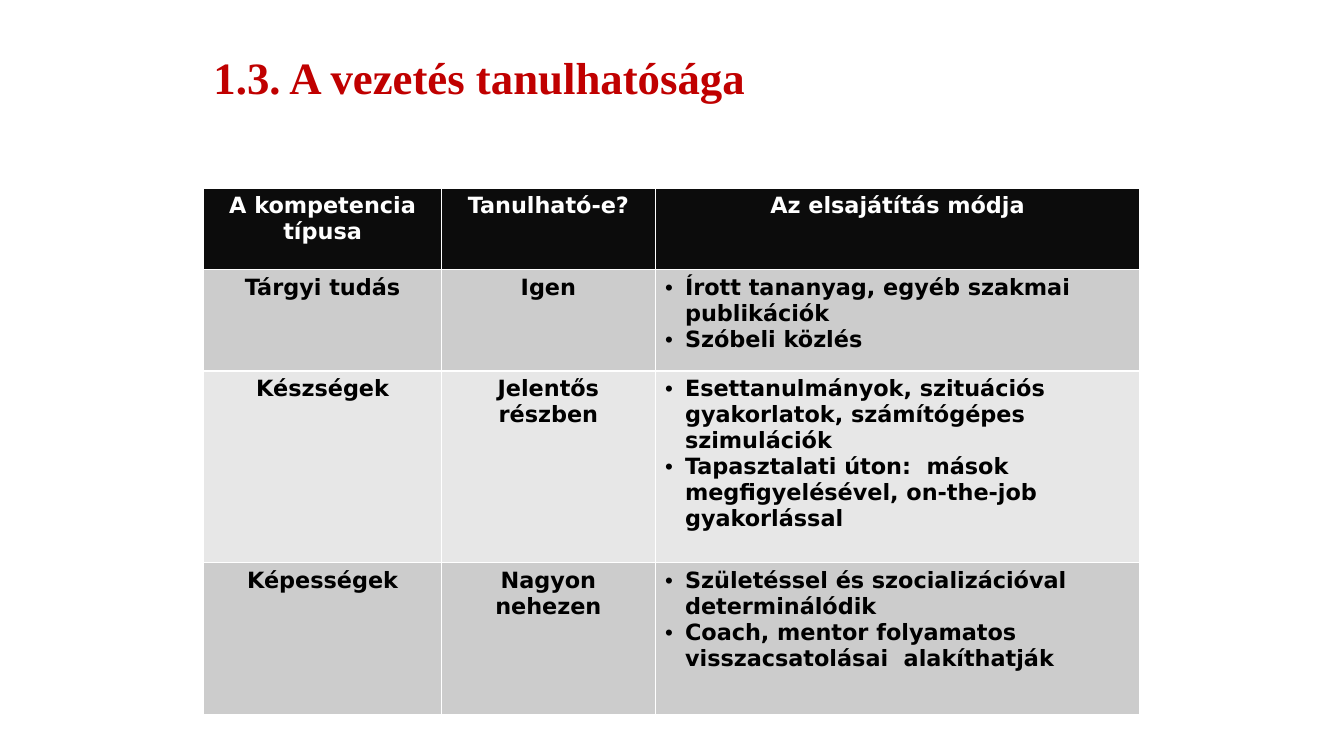
from lxml.etree import SubElement
from pptx import Presentation
from pptx.dml.color import RGBColor
from pptx.enum.text import MSO_ANCHOR, PP_ALIGN
from pptx.oxml.ns import qn
from pptx.util import Cm, Pt

RED, BLACK, WHITE = "C00000", "000000", "FFFFFF"
HEADER_FILL, DARK_BAND, LIGHT_BAND = "0C0C0C", "CCCCCC", "E7E7E7"
LEFT = 5.13
COLUMN_WIDTHS = [6, 5.38, 12.22]
ROW_HEIGHTS = [2.06, 2.55, 4.83, 3.84]
HEADER = ["A kompetencia típusa", "Tanulható-e?", "Az elsajátítás módja"]
COMPETENCES = [
    ("Tárgyi tudás", "Igen",
     ["Írott tananyag, egyéb szakmai publikációk", "Szóbeli közlés"]),
    ("Készségek", "Jelentős részben",
     ["Esettanulmányok, szituációs gyakorlatok, számítógépes szimulációk",
      "Tapasztalati úton:  mások megfigyelésével, on-the-job gyakorlással"]),
    ("Képességek", "Nagyon nehezen",
     ["Születéssel és szocializációval determinálódik",
      "Coach, mentor folyamatos  visszacsatolásai  alakíthatják"]),
]


def rgb(color):
    return RGBColor.from_string(color)


def add_bullet(p, indent=0.5):
    pPr = p._p.get_or_add_pPr()
    pPr.set("marL", str(Cm(indent)))
    pPr.set("indent", str(-Cm(indent)))
    SubElement(pPr, qn("a:buFont"), typeface="Arial")
    SubElement(pPr, qn("a:buChar"), char="•")


def write(tf, text, font="DejaVu Sans", size=16, color=BLACK,
          align=PP_ALIGN.LEFT):
    """Fill a text frame; a list of texts becomes a bulleted list."""
    bulleted = isinstance(text, list)
    for i, line in enumerate(text if bulleted else [text]):
        p = tf.add_paragraph() if i else tf.paragraphs[0]
        p.alignment = align
        if bulleted:
            add_bullet(p)
        r = p.add_run()
        r.text = line
        r.font.name, r.font.size, r.font.bold = font, Pt(size), True
        r.font.color.rgb = rgb(color)


def set_borders(cell, color=WHITE, width=1):
    tcPr = cell._tc.get_or_add_tcPr()
    for side in ("lnL", "lnR", "lnT", "lnB"):
        ln = SubElement(tcPr, qn(f"a:{side}"), w=str(Pt(width)))
        fill = SubElement(ln, qn("a:solidFill"))
        SubElement(fill, qn("a:srgbClr"), val=color)


def add_title(s, left, top, width, height):
    tf = s.shapes.add_textbox(Cm(left), Cm(top), Cm(width), Cm(height)).text_frame
    tf.word_wrap = True
    tf.vertical_anchor = MSO_ANCHOR.MIDDLE
    write(tf, "1.3. A vezetés tanulhatósága", font="Times New Roman", size=32,
          color=RED)


def add_competence_table(s, left, top):
    rows = [HEADER, *COMPETENCES]
    table = s.shapes.add_table(
        len(rows), len(HEADER), Cm(left), Cm(top),
        Cm(sum(COLUMN_WIDTHS)), Cm(sum(ROW_HEIGHTS))).table
    for column, width in zip(table.columns, COLUMN_WIDTHS):
        column.width = Cm(width)
    for i, (texts, height) in enumerate(zip(rows, ROW_HEIGHTS)):
        table.rows[i].height = Cm(height)
        band = DARK_BAND if i % 2 else LIGHT_BAND
        for j, text in enumerate(texts):
            cell = table.cell(i, j)
            set_borders(cell)
            cell.fill.solid()
            cell.fill.fore_color.rgb = rgb(band if i else HEADER_FILL)
            write(cell.text_frame, text, color=BLACK if i else WHITE,
                  align=PP_ALIGN.LEFT if isinstance(text, list) else PP_ALIGN.CENTER)


def main():
    prs = Presentation()
    prs.slide_width, prs.slide_height = Cm(33.87), Cm(19.05)
    s = prs.slides.add_slide(prs.slide_layouts[6])
    add_title(s, LEFT, 0.76, 24.5, 2.36)
    add_competence_table(s, LEFT, 4.74)
    prs.save("out.pptx")


if __name__ == "__main__":
    main()
